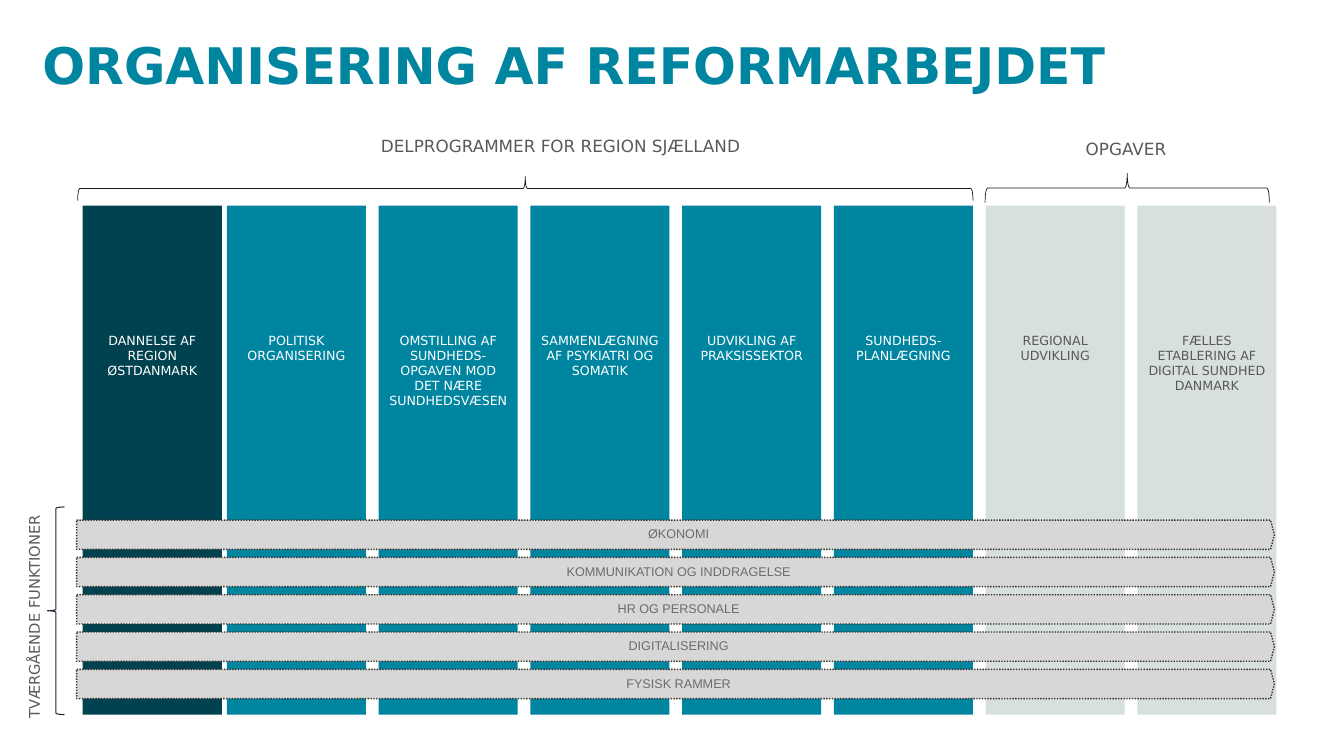
from pptx import Presentation
from pptx.dml.color import RGBColor
from pptx.enum.dml import MSO_LINE
from pptx.enum.shapes import MSO_SHAPE
from pptx.enum.text import MSO_ANCHOR, PP_ALIGN
from pptx.util import Inches, Pt

SANS = "DejaVu Sans"
DARK, TEAL, PALE, GREY = "004250", "0085A0", "D7E0DC", "595959"
COLUMN_TOP, COLUMN_WIDTH, COLUMN_HEIGHT = 2.04, 1.38, 5.05
COLUMN_START, COLUMN_PITCH = 2.25, 1.505
BAND_PITCH, BAND_HEIGHT = 0.37, 0.29

FIRST_COLUMN = "DANNELSE AF REGION ØSTDANMARK"
COLUMNS = [
    ("POLITISK ORGANISERING", TEAL, "FFFFFF"),
    ("OMSTILLING AF SUNDHEDS-OPGAVEN MOD DET NÆRE SUNDHEDSVÆSEN", TEAL, "FFFFFF"),
    ("SAMMENLÆGNING AF PSYKIATRI OG SOMATIK", TEAL, "FFFFFF"),
    ("UDVIKLING AF PRAKSISSEKTOR", TEAL, "FFFFFF"),
    ("SUNDHEDS-PLANLÆGNING", TEAL, "FFFFFF"),
    ("REGIONAL UDVIKLING", PALE, GREY),
    ("FÆLLES ETABLERING AF DIGITAL SUNDHED DANMARK", PALE, GREY),
]
BANDS = ["ØKONOMI", "KOMMUNIKATION OG INDDRAGELSE", "HR OG PERSONALE",
         "DIGITALISERING", "FYSISK RAMMER"]


def color(value):
    return RGBColor.from_string(value)


def apply_format(target, values):
    for name, value in values.items():
        setattr(target, name, value)


def write(shape, text, size, text_color, margins, font=SANS, bold=False,
          align=PP_ALIGN.LEFT, anchor=MSO_ANCHOR.TOP, spacing=1.0, wrap=True):
    frame = shape.text_frame
    sides = ("margin_left", "margin_top", "margin_right", "margin_bottom")
    apply_format(frame, dict(zip(sides, map(Inches, margins))))
    apply_format(frame, {"word_wrap": wrap, "vertical_anchor": anchor})
    paragraph = frame.paragraphs[0]
    apply_format(paragraph, {"alignment": align, "line_spacing": spacing})
    run = paragraph.add_run()
    run.text = text
    apply_format(run.font, {"name": font, "size": Pt(size), "bold": bold})
    run.font.color.rgb = color(text_color)


def add_shape(slide, kind, box, fill=None, line=None, width=1):
    shape = slide.shapes.add_shape(kind, *map(Inches, box))
    shape.shadow.inherit = False
    if fill:
        shape.fill.solid()
        shape.fill.fore_color.rgb = color(fill)
    else:
        shape.fill.background()
    if line:
        shape.line.color.rgb = color(line)
        shape.line.width = Pt(width)
    else:
        shape.line.fill.background()
    return shape


def add_label(slide, text, box, size=12, rotation=0, wrap=False):
    label = slide.shapes.add_textbox(*map(Inches, box))
    label.rotation = rotation
    write(label, text, size, GREY, (0.1, 0.05, 0.1, 0.05), wrap=wrap)


def add_title(slide, box):
    title = slide.shapes.add_textbox(*map(Inches, box))
    write(title, "ORGANISERING AF REFORMARBEJDET", 36, "0085A1", (0, 0, 0, 0),
          bold=True, anchor=MSO_ANCHOR.BOTTOM, spacing=0.9)


def add_column(slide, text, left, fill, text_color):
    box = (left, COLUMN_TOP, COLUMN_WIDTH, COLUMN_HEIGHT)
    column = add_shape(slide, MSO_SHAPE.RECTANGLE, box, fill)
    write(column, text, 9, text_color, (0.08, 1.26, 0.08, 0.05),
          align=PP_ALIGN.CENTER)


def add_columns(slide):
    add_column(slide, FIRST_COLUMN, 0.82, DARK, "FFFFFF")
    for index, (text, fill, text_color) in enumerate(COLUMNS):
        left = COLUMN_START + index * COLUMN_PITCH
        add_column(slide, text, left, fill, text_color)


def add_bands(slide, left, top, width):
    for index, text in enumerate(BANDS):
        box = (left, top + index * BAND_PITCH, width, BAND_HEIGHT)
        band = add_shape(slide, MSO_SHAPE.PENTAGON, box, "D7D7D7", "333126")
        band.adjustments[0] = 0.131
        band.line.dash_style = MSO_LINE.ROUND_DOT
        write(band, text, 9, "6C6C6C", (0.12, 0.12, 0.04, 0.12), font="Arial",
              align=PP_ALIGN.CENTER, anchor=MSO_ANCHOR.MIDDLE, spacing=0.93)


def add_top_brace(slide, left, top, width, height):
    """Turn a right brace a quarter so that it spans the given box."""
    turned = (left + (width - height) / 2, top + (height - width) / 2,
              height, width)
    brace = add_shape(slide, MSO_SHAPE.RIGHT_BRACE, turned, line="181818", width=0.5)
    brace.rotation = 270


def add_groupings(slide):
    add_top_brace(slide, 0.77, 1.75, 8.88, 0.24)
    add_label(slide, "DELPROGRAMMER FOR REGION SJÆLLAND", (3.68, 1.3, 3.88, 0.3))
    add_top_brace(slide, 9.77, 1.72, 2.82, 0.29)
    add_label(slide, "OPGAVER", (10.67, 1.33, 1.02, 0.3))
    add_shape(slide, MSO_SHAPE.LEFT_BRACE, (0.47, 5.03, 0.17, 2.06),
              line="1F2936", width=0.75)
    add_label(slide, "TVÆRGÅENDE FUNKTIONER", (-1.55, 5.19, 3.79, 0.29),
              size=10.5, rotation=270, wrap=True)


def main():
    presentation = Presentation()
    presentation.slide_width = Inches(13.33)
    presentation.slide_height = Inches(7.5)
    slide = presentation.slides.add_slide(presentation.slide_layouts[6])
    # Title
    add_title(slide, (0.42, 0.4, 11.58, 0.55))
    # Programme columns and the functions that cross them
    add_columns(slide)
    add_bands(slide, 0.76, 5.16, 11.88)
    # Braces with their headings
    add_groupings(slide)
    presentation.save("out.pptx")


if __name__ == "__main__":
    main()
